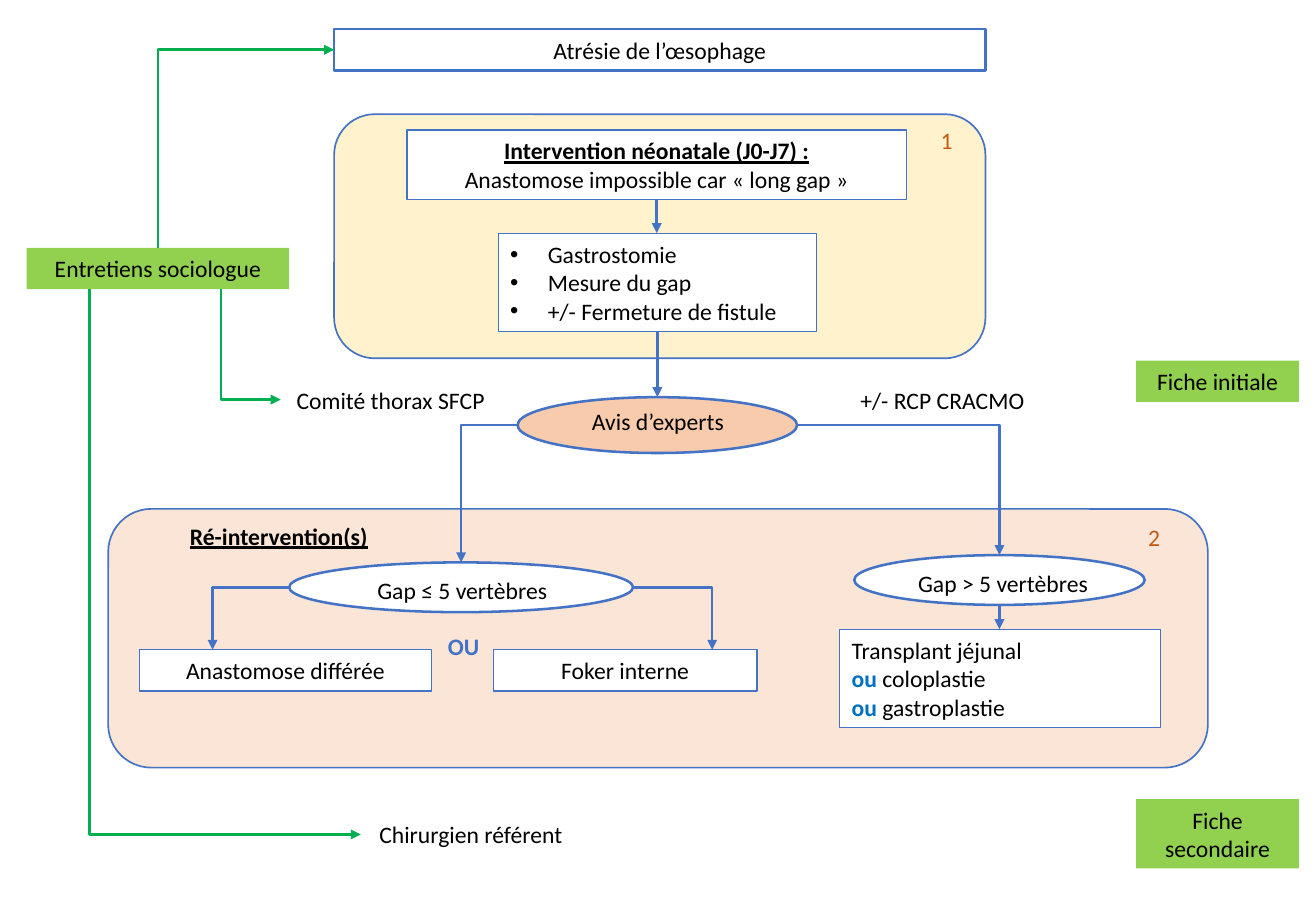
import lxml.etree
import pptx
import pptx.dml.color
import pptx.enum.shapes
import pptx.enum.text
import pptx.oxml.ns
import pptx.util

SHAPES = pptx.enum.shapes.MSO_SHAPE
ALIGN = pptx.enum.text.PP_ALIGN
COLUMNS, ROWS = 108.3, 75
CELL = pptx.util.Inches(0.1)
BLUE, GREEN = "4472C4", "00B050"

RUN_STYLES = {
    "plain": ("000000", False, False),
    "heading": ("000000", True, True),
    "number": ("C55A11", False, False),
    "or": ("0070C0", True, False),
    "choice": (BLUE, True, False),
}

KINDS = {
    "title": (None, None, 1.5),
    "neonatal panel": (SHAPES.ROUNDED_RECTANGLE, "FFF2CC", 1),
    "repeat panel": (SHAPES.ROUNDED_RECTANGLE, "FBE5D6", 1),
    "step": (SHAPES.RECTANGLE, "FFFFFF", 0.75),
    "form": (SHAPES.RECTANGLE, "92D050", 0),
    "opinion": (SHAPES.OVAL, "F8CBAD", 1.5),
    "gap": (SHAPES.OVAL, "FFFFFF", 1.5),
    "label": (None, None, 0),
}

BOXES = [
    ("atresia", "title", (27.5, 2.4, 53.6, 3.4), "center",
     [[("Atrésie de l’œsophage", "plain")]]),
    ("neonatal", "neonatal panel", (27.5, 9.4, 53.6, 20.1), "center", []),
    ("surgery", "step", (33.5, 10.7, 41.1, 5.7), "center",
     [[("Intervention néonatale (J0-J7) :", "heading")],
      [("Anastomose impossible car « long gap »", "plain")]]),
    ("panel 1", "label", (76.2, 9.8, 3.4, 3.4), "center", [[("1", "number")]]),
    ("measures", "step", (41, 19.2, 26.2, 8.1), "bullet",
     [[("Gastrostomie", "plain")],
      [("Mesure du gap", "plain")],
      [("+/- Fermeture de fistule", "plain")]]),
    ("experts", "opinion", (42.6, 32.7, 23, 4.6), "center", []),
    ("experts text", "label", (45.1, 33, 18.1, 3.4), "center",
     [[("Avis d’experts", "plain")]]),
    ("repeat", "repeat panel", (8.9, 41.9, 90.5, 21.3), "center", []),
    ("long gap", "gap", (70.3, 45.7, 23.9, 4.1), "center", []),
    ("long gap text", "label", (70.6, 46.3, 23.9, 3.4), "center",
     [[("Gap > 5 vertèbres", "plain")]]),
    ("transplant", "step", (69.1, 51.8, 26.4, 8.1), "left",
     [[("Transplant jéjunal", "plain")],
      [("ou ", "or"), ("coloplastie", "plain")],
      [("ou", "or"), (" gastroplastie", "plain")]]),
    ("short gap", "gap", (23.8, 46.3, 28.3, 4.1), "center", []),
    ("short gap text", "label", (26.1, 46.9, 23.9, 3.4), "center",
     [[("Gap ≤ 5 vertèbres", "plain")]]),
    ("delayed", "step", (11.5, 53.5, 24, 3.4), "center",
     [[("Anastomose différée", "plain")]]),
    ("foker", "step", (40.6, 53.5, 21.7, 3.4), "center",
     [[("Foker interne", "plain")]]),
    ("choice", "label", (32.3, 51.5, 11.7, 3.4), "center", [[("OU", "choice")]]),
    ("repeat text", "label", (12.3, 42.4, 21.3, 3.4), "center",
     [[("Ré-intervention(s)", "heading")]]),
    ("panel 2", "label", (93.5, 42.5, 2.9, 3.4), "center", [[("2", "number")]]),
    ("second form", "form", (93.5, 65.8, 13.4, 5.7), "center",
     [[("Fiche secondaire", "plain")]]),
    ("first form", "form", (93.5, 29.7, 13.4, 3.4), "center",
     [[("Fiche initiale", "plain")]]),
    ("meeting", "label", (68.5, 31.2, 18.1, 3.4), "center",
     [[("+/- RCP CRACMO", "plain")]]),
    ("committee", "label", (23.1, 31.2, 18.1, 3.4), "center",
     [[("Comité thorax SFCP", "plain")]]),
    ("interviews", "form", (2.2, 20.4, 21.6, 3.4), "center",
     [[("Entretiens sociologue", "plain")]]),
    ("surgeon", "label", (29.7, 67, 18.1, 3.4), "center",
     [[("Chirurgien référent", "plain")]]),
]

TOP, BOTTOM, LEFT, RIGHT = (0.5, 0), (0.5, 1), (0, 0.5), (1, 0.5)
LINKS = [
    ("surgery", BOTTOM, "measures", TOP, "straight", BLUE, "tailEnd"),
    ("measures", BOTTOM, "experts", TOP, "straight", BLUE, "tailEnd"),
    ("long gap", BOTTOM, "transplant", TOP, "straight", BLUE, "tailEnd"),
    ("short gap", LEFT, "delayed", (0.25, 0), "bent", BLUE, "tailEnd"),
    ("short gap", RIGHT, "foker", (0.83, 0), "bent", BLUE, "tailEnd"),
    ("experts", LEFT, "short gap", TOP, "bent", BLUE, "tailEnd"),
    ("experts", RIGHT, "long gap", TOP, "bent", BLUE, "tailEnd"),
    ("atresia", LEFT, "interviews", TOP, "bent", GREEN, "headEnd"),
    ("committee", LEFT, "interviews", (0.74, 1), "bent", GREEN, "headEnd"),
    ("surgeon", LEFT, "interviews", (0.24, 1), "bent", GREEN, "headEnd"),
]


def color(value):
    return pptx.dml.color.RGBColor.from_string(value)


def cells(values):
    return [round(value * CELL) for value in values]


def add_element(parent, tag, **attributes):
    return lxml.etree.SubElement(parent, pptx.oxml.ns.qn(tag), attributes)


def write_text(box, align, paragraphs):
    frame = box.text_frame
    frame.word_wrap = True
    frame.auto_size = pptx.enum.text.MSO_AUTO_SIZE.NONE
    frame.vertical_anchor = pptx.enum.text.MSO_ANCHOR.MIDDLE
    frame.margin_left = frame.margin_right = CELL
    frame.margin_top = frame.margin_bottom = CELL // 2
    for index, runs in enumerate(paragraphs):
        para = frame.add_paragraph() if index else frame.paragraphs[0]
        para.alignment = ALIGN.CENTER if align == "center" else ALIGN.LEFT
        if align == "bullet":
            properties = para._p.get_or_add_pPr()
            indent = pptx.util.Inches(0.31)
            properties.set("marL", str(indent))
            properties.set("indent", str(-indent))
            add_element(properties, "a:buFont", typeface="Arial")
            add_element(properties, "a:buChar", char="•")
        for text, style in runs:
            span = para.add_run()
            span.text = text
            span.font.name = "Calibri"
            span.font.size = pptx.util.Pt(14)
            tone, span.font.bold, span.font.underline = RUN_STYLES[style]
            span.font.color.rgb = color(tone)


def add_box(page, kind, place, align, paragraphs):
    preset, fill, line_width = KINDS[kind]
    if kind == "title":
        box = page.shapes.title
        box.left, box.top, box.width, box.height = cells(place)
    elif preset is None:
        box = page.shapes.add_textbox(*cells(place))
    else:
        box = page.shapes.add_shape(preset, *cells(place))
        box.shadow.inherit = False
    if fill:
        box.fill.solid()
        box.fill.fore_color.rgb = color(fill)
    if line_width:
        box.line.color.rgb = color(BLUE)
        box.line.width = pptx.util.Pt(line_width)
    else:
        box.line.fill.background()
    if paragraphs:
        write_text(box, align, paragraphs)


def find_point(place, share):
    left, top, width, height = place
    return left + width * share[0], top + height * share[1]


def add_link(page, start, end, route, tone, arrow_end):
    if route == "straight":
        end = (start[0], end[1])
    line = page.shapes.add_connector(
        pptx.enum.shapes.MSO_CONNECTOR.STRAIGHT, *cells(start + end))
    properties = line._element.spPr
    if route == "bent":
        properties.find(pptx.oxml.ns.qn("a:prstGeom")).set("prst", "bentConnector2")
    line.line.color.rgb = color(tone)
    line.line.width = pptx.util.Pt(1.5)
    add_element(line.line._get_or_add_ln(), "a:" + arrow_end, type="triangle")
    add_element(properties, "a:effectLst")


def main():
    deck = pptx.Presentation()
    deck.slide_width, deck.slide_height = cells((COLUMNS, ROWS))
    page = deck.slides.add_slide(deck.slide_layouts[5])
    places = {}
    for name, kind, place, align, paragraphs in BOXES:
        places[name] = place
        add_box(page, kind, place, align, paragraphs)
    for first, leave, second, arrive, route, tone, arrow_end in LINKS:
        start = find_point(places[first], leave)
        end = find_point(places[second], arrive)
        add_link(page, start, end, route, tone, arrow_end)
    deck.save("out.pptx")


if __name__ == "__main__":
    main()
